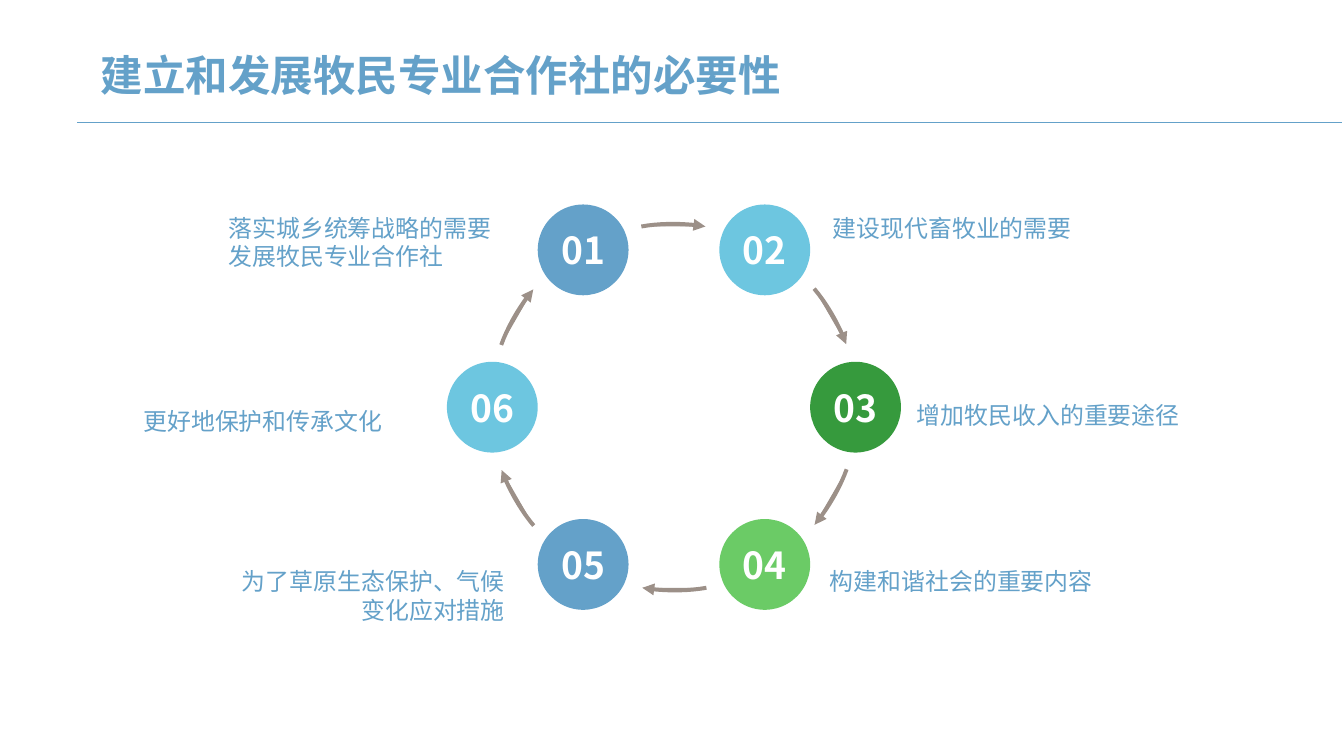
import math

from lxml import etree
from pptx import Presentation
from pptx.dml.color import RGBColor
from pptx.enum.shapes import MSO_CONNECTOR, MSO_SHAPE
from pptx.enum.text import MSO_ANCHOR, PP_ALIGN
from pptx.oxml.ns import qn
from pptx.util import Inches, Pt

OVAL = MSO_SHAPE.OVAL
STRAIGHT = MSO_CONNECTOR.STRAIGHT
TOP, MIDDLE = MSO_ANCHOR.TOP, MSO_ANCHOR.MIDDLE
LEFT, CENTER, RIGHT = PP_ALIGN.LEFT, PP_ALIGN.CENTER, PP_ALIGN.RIGHT

FONT = "Noto Sans CJK SC"
COLORS = {
    "blue": "64A1C9",
    "sky": "6DC6E0",
    "green": "369A3D",
    "lime": "6BCB66",
    "arrow": "9C9088",
    "white": "FFFFFF",
}


def rgb(name):
    return RGBColor.from_string(COLORS[name])


def write(sp, text, size, color, bold=False, align=LEFT, anchor=TOP, insets=(0.1, 0.05)):
    """Put one styled paragraph in a shape; insets are (sides, top and bottom)."""
    tf = sp.text_frame
    side, edge = (Inches(v) for v in insets)
    frame = {
        "word_wrap": True, "vertical_anchor": anchor,
        "margin_left": side, "margin_right": side,
        "margin_top": edge, "margin_bottom": edge,
    }
    for key, value in frame.items():
        setattr(tf, key, value)
    p = tf.paragraphs[0]
    p.alignment = align
    r = p.add_run()
    r.text = text
    for key, value in {"size": Pt(size), "bold": bold, "name": FONT}.items():
        setattr(r.font, key, value)
    r.font.color.rgb = rgb(color)
    etree.SubElement(r.font._element, qn("a:ea"), typeface=FONT)


prs = Presentation()
prs.slide_width, prs.slide_height = Inches(14.06), Inches(7.91)
s = prs.slides.add_slide(prs.slide_layouts[6])
shapes = s.shapes

# Title and rule
title = shapes.add_textbox(Inches(0.6), Inches(0.51), Inches(8.03), Inches(0.54))
write(title, "建立和发展牧民专业合作社的必要性", 32, "blue", True, CENTER, MIDDLE)
rule = shapes.add_connector(STRAIGHT, Inches(0.81), Inches(1.28), Inches(14.04), Inches(1.28))
rule.line.color.rgb = rgb("blue")
rule.line.width = Pt(0.5)
etree.SubElement(rule._element.spPr, qn("a:effectLst"))

# Ring of six numbered circles, clockwise from the upper left
RING_X, RING_Y, RING_R = 7.05, 4.26, 1.9
CIRCLE = 0.95
circle_colors = ["blue", "sky", "green", "lime", "blue", "sky"]
for i, color in enumerate(circle_colors):
    angle = math.radians(60 * i - 120)
    x = RING_X + RING_R * math.cos(angle) - CIRCLE / 2
    y = RING_Y + RING_R * math.sin(angle) - CIRCLE / 2
    sp = shapes.add_shape(OVAL, Inches(x), Inches(y), Inches(CIRCLE), Inches(CIRCLE))
    sp.shadow.inherit = False
    sp.fill.solid()
    sp.fill.fore_color.rgb = rgb(color)
    sp.line.fill.background()
    write(sp, f"{i + 1:02d}", 28, "white", True, CENTER, MIDDLE, (0, 0))

# Curved arrows: the top one, as Bezier points from the ring centre, turned by 60 degrees
TOP_ARROW = [(-0.34, -1.89), (-0.06, -1.94), (0.22, -1.91), (0.33, -1.89)]
STEPS = 12
for i in range(6):
    turn = math.radians(60 * i)
    points = []
    for step in range(STEPS + 1):
        t = step / STEPS
        weights = [math.comb(3, n) * t**n * (1 - t) ** (3 - n) for n in range(4)]
        dx, dy = (sum(w * pt[axis] for w, pt in zip(weights, TOP_ARROW)) for axis in (0, 1))
        x = RING_X + dx * math.cos(turn) - dy * math.sin(turn)
        y = RING_Y + dx * math.sin(turn) + dy * math.cos(turn)
        points.append((Inches(x), Inches(y)))
    builder = shapes.build_freeform(*points[0])
    builder.add_line_segments(points[1:], close=False)
    arrow = builder.convert_to_shape()
    arrow.shadow.inherit = False
    arrow.fill.solid()
    arrow.fill.fore_color.rgb = rgb("arrow")
    arrow.line.color.rgb = rgb("arrow")
    arrow.line.width = Pt(3)
    ln = arrow.line._get_or_add_ln()
    etree.SubElement(ln, qn("a:round"))
    etree.SubElement(ln, qn("a:tailEnd"), type="triangle")

# Labels: left, top, width, height, alignment, text
labels = [
    (2.32, 2.19, 3.11, 0.68, LEFT, "落实城乡统筹战略的需要发展牧民专业合作社"),
    (8.64, 2.19, 3.11, 0.38, LEFT, "建设现代畜牧业的需要"),
    (9.52, 4.15, 3.11, 0.38, LEFT, "增加牧民收入的重要途径"),
    (8.61, 5.89, 3.11, 0.38, LEFT, "构建和谐社会的重要内容"),
    (2.24, 5.89, 3.11, 0.94, RIGHT, "为了草原生态保护、气候变化应对措施"),
    (1.43, 4.21, 3.24, 0.38, LEFT, "更好地保护和传承文化"),
]
for *box, align, text in labels:
    label = shapes.add_textbox(*(Inches(v) for v in box))
    write(label, text, 18, "blue", align=align, insets=(0.07, 0.04))

prs.save("out.pptx")
